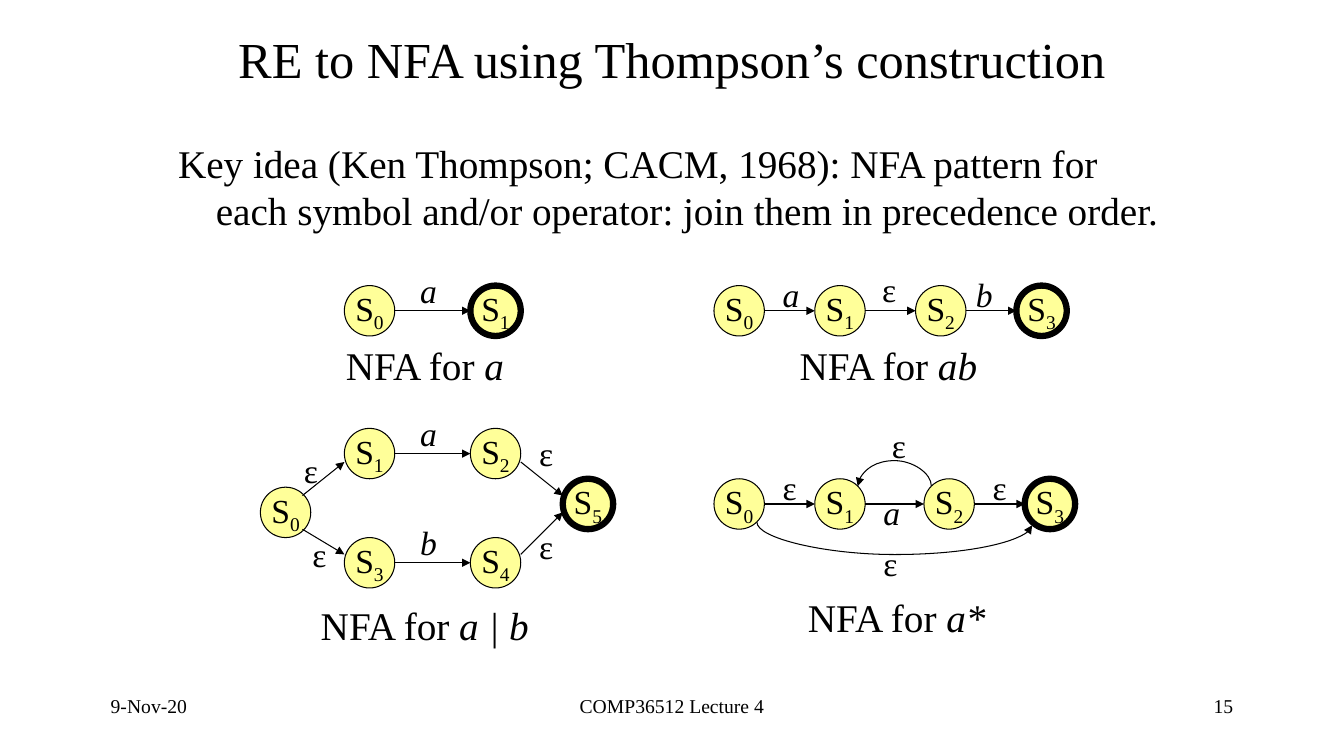
from lxml import etree
from pptx import Presentation
from pptx.dml.color import RGBColor
from pptx.enum.shapes import MSO_CONNECTOR, MSO_SHAPE
from pptx.enum.text import MSO_ANCHOR, MSO_AUTO_SIZE, PP_ALIGN
from pptx.oxml.ns import qn
from pptx.util import Pt

LEFT, CENTER, RIGHT = PP_ALIGN.LEFT, PP_ALIGN.CENTER, PP_ALIGN.RIGHT
TOP, MIDDLE = MSO_ANCHOR.TOP, MSO_ANCHOR.MIDDLE
STRAIGHT, CURVE = MSO_CONNECTOR.STRAIGHT, MSO_CONNECTOR.CURVE
OVAL, NO_FIT = MSO_SHAPE.OVAL, MSO_AUTO_SIZE.NONE

COLORS = {"ink": "000000", "state": "FFFF99", "paper": "FFFFFF"}
FONT = "Times New Roman"
NODE = 36

TITLE = "RE to NFA using Thompson’s construction"
KEY_IDEA = ("Key idea (Ken Thompson; CACM, 1968): NFA pattern for each symbol "
            "and/or operator: join them in precedence order.")
FOOTERS = [
    ("9-Nov-20", 72, 200, LEFT),
    ("COMP36512 Lecture 4", 328, 304, CENTER),
    ("15", 688, 200, RIGHT),
]

# MACHINES
MACHINES = [
    {
        "name": "a", "caption": (240, 240, 131),
        "states": [(246, 204), (336, 204)],
        "rows": [(0, 1)], "slants": [], "curves": [],
        "labels": [("a", 293, 189.5)],
    },
    {
        "name": "ab", "caption": (564, 240, 145.5),
        "states": [(510, 204), (582, 204), (654, 204), (726, 204)],
        "rows": [(0, 1), (1, 2), (2, 3)], "slants": [], "curves": [],
        "labels": [("a", 552, 192), ("ε", 623, 188.5), ("b", 690, 192)],
    },
    {
        "name": "a | b", "caption": (222, 426, 167),
        "states": [(186, 348), (246, 306), (336, 306),
                   (246, 384), (336, 384), (402, 342)],
        "rows": [(1, 2), (3, 4)],
        "slants": [(216, 354, 246, 330), (216, 378, 246, 396),
                   (372, 330, 402, 354), (372, 396, 402, 366)],
        "curves": [],
        "labels": [("a", 293, 291.5), ("b", 293, 369.5), ("ε", 210, 318),
                   ("ε", 216, 378), ("ε", 378, 306), ("ε", 378, 372)],
    },
    {
        "name": "a*", "caption": (570, 420, 145.5),
        "states": [(510, 342), (582, 342), (660, 342), (732, 342)],
        "rows": [(0, 1), (1, 2), (2, 3)], "slants": [],
        "curves": [(540.7, 373, 737.3, 375.2, 23),
                   (665.3, 347.2, 612.7, 347.3, -16)],
        "labels": [("ε", 552, 330), ("a", 624, 348), ("ε", 702, 330),
                   ("ε", 630, 300), ("ε", 624, 384)],
    },
]


def rgb(name):
    return RGBColor.from_string(COLORS[name])


def add_run(p, text, size, italic=False):
    r = p.add_run()
    r.text = text
    for key, value in {"name": FONT, "size": Pt(size), "italic": italic}.items():
        setattr(r.font, key, value)
    r.font.color.rgb = rgb("ink")
    return r


def format_frame(tf, **formats):
    for key, value in formats.items():
        setattr(tf, key, value)


def place(sp, *box):
    for key, value in zip(("left", "top", "width", "height"), box):
        setattr(sp, key, Pt(value))


def add_text(s, runs, box, size, align=LEFT, wrap=False):
    tf = s.shapes.add_textbox(*map(Pt, box)).text_frame
    format_frame(tf, word_wrap=wrap, vertical_anchor=TOP)
    p = tf.paragraphs[0]
    p.alignment = align
    for text, italic in runs:
        add_run(p, text, size, italic)


def add_state(s, number, x, y, final):
    sp = s.shapes.add_shape(OVAL, Pt(x), Pt(y), Pt(NODE), Pt(NODE))
    sp.shadow.inherit = False
    sp.fill.solid()
    sp.fill.fore_color.rgb = rgb("state")
    sp.line.color.rgb = rgb("ink")
    sp.line.width = Pt(4.5 if final else 0.75)
    format_frame(sp.text_frame, word_wrap=False, vertical_anchor=MIDDLE)
    p = sp.text_frame.paragraphs[0]
    p.alignment = CENTER
    add_run(p, "S", 24)
    r = add_run(p, str(number), 24)
    r.font._element.set("baseline", "-25000")


def add_arrow(s, x1, y1, x2, y2, kind=STRAIGHT):
    sp = s.shapes.add_connector(kind, Pt(x1), Pt(y1), Pt(x2), Pt(y2))
    sp.line.color.rgb = rgb("ink")
    sp.line.width = Pt(0.75)
    ln = sp.line._get_or_add_ln()
    etree.SubElement(ln, qn("a:tailEnd"), type="triangle")
    etree.SubElement(sp._element.spPr, qn("a:effectLst"))
    return sp


def add_curve(s, x1, y1, x2, y2, depth):
    sp = add_arrow(s, x1, y1, x2, y2, CURVE)
    span, drop = abs(x2 - x1), y2 - y1
    place(sp, (x1 + x2 - drop) / 2, (y1 + y2 - span) / 2, drop, span)
    sp.rotation = 270
    xfrm = sp._element.spPr.find(qn("a:xfrm"))
    xfrm.set("flipH", "1")
    xfrm.set("flipV", "1" if x2 < x1 else "0")
    geom = sp._element.spPr.find(qn("a:prstGeom"))
    guides = geom.find(qn("a:avLst"))
    etree.SubElement(guides, qn("a:gd"), name="adj1",
                     fmla=f"val {round(depth / drop * 100000)}")


def add_machine(s, m):
    states = m["states"]
    final = len(states) - 1
    numbers = list(range(len(states)))
    for i, (x, y) in zip(numbers, states):
        add_state(s, i, x, y, i == final)
    for i, j in m["rows"]:
        y = states[i][1] + NODE / 2
        add_arrow(s, states[i][0] + NODE, y, states[j][0], y)
    for ends in m["slants"]:
        add_arrow(s, *ends)
    for curve in m["curves"]:
        add_curve(s, *curve)
    for text, x, y in m["labels"]:
        width = 26.5 if text == "b" else 25
        add_text(s, [(text, text != "ε")], (x, y, width, 36), 24)
    x, y, width = m["caption"]
    add_text(s, [("NFA for ", False), (m["name"], True)], (x, y, width, 41), 28)


def main():
    prs = Presentation()
    prs.slide_width, prs.slide_height = Pt(960), Pt(540)
    s = prs.slides.add_slide(prs.slide_layouts[1])
    s.background.fill.solid()
    s.background.fill.fore_color.rgb = rgb("paper")

    title, body = s.placeholders
    place(title, 132, 12, 696, 60)
    place(body, 120, 96, 720, 84)
    for sp, text, size, anchor, align in ((title, TITLE, 36, MIDDLE, CENTER),
                                          (body, KEY_IDEA, 28, TOP, LEFT)):
        format_frame(sp.text_frame, word_wrap=True, auto_size=NO_FIT,
                     vertical_anchor=anchor)
        p = sp.text_frame.paragraphs[0]
        p.alignment = align
        add_run(p, text, size)

    p = body.text_frame.paragraphs[0]
    p.space_before = Pt(5.6)
    pPr = p._p.get_or_add_pPr()
    pPr.set("marL", str(Pt(27)))
    pPr.set("indent", str(-Pt(27)))
    etree.SubElement(pPr, qn("a:buNone"))

    for text, x, width, align in FOOTERS:
        add_text(s, [(text, False)], (x, 492, width, 36), 14, align, True)
    for m in MACHINES:
        add_machine(s, m)
    prs.save("out.pptx")


if __name__ == "__main__":
    main()
